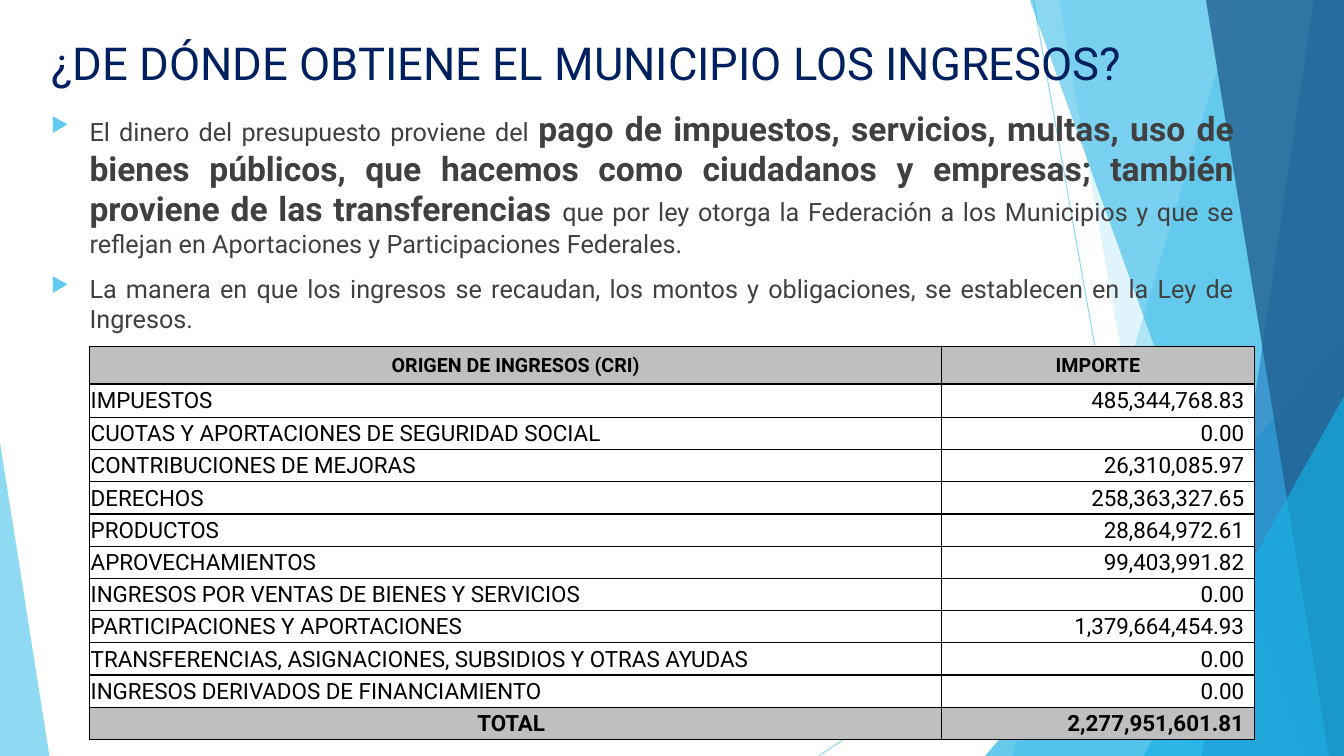
from dataclasses import dataclass

from lxml import etree
from pptx import Presentation
from pptx.dml.color import RGBColor
from pptx.enum.shapes import MSO_CONNECTOR, MSO_SHAPE
from pptx.enum.text import MSO_ANCHOR, PP_ALIGN
from pptx.oxml.ns import qn
from pptx.util import Inches, Pt

STRAIGHT = MSO_CONNECTOR.STRAIGHT
TRIANGLE = MSO_SHAPE.ISOSCELES_TRIANGLE
MIDDLE = MSO_ANCHOR.MIDDLE
LEFT, CENTER, RIGHT, JUSTIFY = PP_ALIGN.LEFT, PP_ALIGN.CENTER, PP_ALIGN.RIGHT, PP_ALIGN.JUSTIFY

SKY = RGBColor(0x5F, 0xCB, 0xEF)
CYAN = RGBColor(0x17, 0xB0, 0xE4)
BLUE = RGBColor(0x2E, 0x83, 0xC3)
DEEP_BLUE = RGBColor(0x22, 0x62, 0x92)
NAVY = RGBColor(0x00, 0x20, 0x60)
DARK_GRAY = RGBColor(0x40, 0x40, 0x40)
GRAY = RGBColor(0xBF, 0xBF, 0xBF)
BLACK = RGBColor(0x00, 0x00, 0x00)
WHITE = RGBColor(0xFF, 0xFF, 0xFF)

FONT = "Roboto"
WIDTH, HEIGHT = 13.33, 7.5
BAND_TOP = -0.01


@dataclass
class Ray:
    start: tuple[float, float]
    end: tuple[float, float]


@dataclass
class Band:
    """A strip from its slanted left edge to the right side of the slide."""
    top_x: float
    bottom_x: float
    color: RGBColor
    opacity: int


@dataclass
class Corner:
    """A triangle standing on the bottom of the slide."""
    left: float
    top: float
    width: float
    apex: float
    color: RGBColor
    opacity: int


@dataclass
class Span:
    text: str
    size: float
    bold: bool = False


DECORATION = [
    Ray((10.25, 0), (11.58, HEIGHT)),
    Ray((WIDTH, 4.03), (8.12, HEIGHT)),
    Band(12.28, 10.04, SKY, 36),
    Band(10.5, 11.83, SKY, 20),
    Corner(9.77, 3.33, 3.56, 1, CYAN, 66),
    Band(10.21, 12.91, CYAN, 50),
    Band(13.03, 11.92, BLUE, 70),
    Band(11.96, 13.18, DEEP_BLUE, 80),
    Corner(11.34, 3.93, 1.99, 1, CYAN, 66),
    Corner(0, 4.39, 0.49, 0, SKY, 70),
]

TITLE = "¿DE DÓNDE OBTIENE EL MUNICIPIO LOS INGRESOS?"
BODY = [
    [
        Span("El dinero del presupuesto proviene del ", 18),
        Span("pago de impuestos, servicios, multas, uso de bienes públicos, que hacemos como "
             "ciudadanos y empresas; también proviene de las transferencias ", 24, True),
        Span("que por ley otorga la Federación a los Municipios y que se reflejan en "
             "Aportaciones y Participaciones Federales.", 18),
    ],
    [Span("La manera en que los ingresos se recaudan, los montos y obligaciones, "
          "se establecen en la Ley de Ingresos.", 18)],
]
INCOME = [
    ("ORIGEN DE INGRESOS (CRI)", "IMPORTE"),
    ("IMPUESTOS", "485,344,768.83"),
    ("CUOTAS Y APORTACIONES DE SEGURIDAD SOCIAL", "0.00"),
    ("CONTRIBUCIONES DE MEJORAS", "26,310,085.97"),
    ("DERECHOS", "258,363,327.65"),
    ("PRODUCTOS", "28,864,972.61"),
    ("APROVECHAMIENTOS", "99,403,991.82"),
    ("INGRESOS POR VENTAS DE BIENES Y SERVICIOS", "0.00"),
    ("PARTICIPACIONES Y APORTACIONES", "1,379,664,454.93"),
    ("TRANSFERENCIAS, ASIGNACIONES, SUBSIDIOS Y OTRAS AYUDAS", "0.00"),
    ("INGRESOS DERIVADOS DE FINANCIAMIENTO", "0.00"),
    ("TOTAL", "2,277,951,601.81"),
]
COLUMN_WIDTHS = [8.45, 3.1]
ROW_HEIGHTS = [0.37, 0.33] + [0.32] * (len(INCOME) - 2)


def set_opacity(shape, percent: int) -> None:
    for color in shape.element.spPr.iter(qn("a:srgbClr")):
        etree.SubElement(color, qn("a:alpha"), val=str(percent * 1000))


def paint(shape, color: RGBColor, opacity: int) -> None:
    shape.shadow.inherit = False
    shape.fill.solid()
    shape.fill.fore_color.rgb = color
    shape.line.fill.background()
    set_opacity(shape, opacity)


def draw_ray(page, ray: Ray) -> None:
    line = page.shapes.add_connector(STRAIGHT, *map(Inches, ray.start + ray.end))
    line.line.color.rgb = SKY
    line.line.width = Pt(0.75)
    etree.SubElement(line.element.spPr, qn("a:effectLst"))
    set_opacity(line, 70)


def draw_band(page, band: Band) -> None:
    corners = [(WIDTH, BAND_TOP), (WIDTH, HEIGHT), (band.bottom_x, HEIGHT)]
    outline = page.shapes.build_freeform(Inches(band.top_x), Inches(BAND_TOP))
    outline.add_line_segments([(Inches(x), Inches(y)) for x, y in corners], close=True)
    paint(outline.convert_to_shape(), band.color, band.opacity)


def draw_corner(page, corner: Corner) -> None:
    box = (corner.left, corner.top, corner.width, HEIGHT - corner.top)
    shape = page.shapes.add_shape(TRIANGLE, *map(Inches, box))
    shape.adjustments[0] = corner.apex
    paint(shape, corner.color, corner.opacity)


def style(run, size: float, color: RGBColor, bold: bool = False) -> None:
    run.font.name = FONT
    run.font.size = Pt(size)
    run.font.bold = bold
    run.font.color.rgb = color


def add_text_frame(page, left: float, top: float, width: float, height: float):
    frame = page.shapes.add_textbox(*map(Inches, (left, top, width, height))).text_frame
    frame.word_wrap = True
    return frame


def add_bullet(para) -> None:
    properties = para._p.get_or_add_pPr()
    properties.set("marL", str(Inches(0.38)))
    properties.set("indent", str(Inches(-0.38)))
    color = etree.SubElement(properties, qn("a:buClr"))
    etree.SubElement(color, qn("a:srgbClr"), val=str(SKY))
    etree.SubElement(properties, qn("a:buSzPct"), val="80000")
    etree.SubElement(properties, qn("a:buChar"), char="▶")


def draw_body(page) -> None:
    frame = add_text_frame(page, 0.41, 1.02, 11.93, 4.24)
    for index, spans in enumerate(BODY):
        para = frame.add_paragraph() if index else frame.paragraphs[0]
        para.alignment = JUSTIFY
        para.space_before = Pt(10)
        add_bullet(para)
        for span in spans:
            run = para.add_run()
            run.text = span.text
            style(run, span.size, DARK_GRAY, span.bold)


def add_borders(cell) -> None:
    properties = cell._tc.get_or_add_tcPr()
    for side in ("lnL", "lnR", "lnT", "lnB"):
        line = etree.SubElement(properties, qn(f"a:{side}"), w=str(Pt(1)))
        fill = etree.SubElement(line, qn("a:solidFill"))
        etree.SubElement(fill, qn("a:srgbClr"), val=str(BLACK))


def draw_income_table(page) -> None:
    box = (0.89, 3.44, sum(COLUMN_WIDTHS), sum(ROW_HEIGHTS))
    table = page.shapes.add_table(len(INCOME), 2, *map(Inches, box)).table
    for column, width in zip(table.columns, COLUMN_WIDTHS):
        column.width = Inches(width)
    last = len(INCOME) - 1
    for row, texts in enumerate(INCOME):
        table.rows[row].height = Inches(ROW_HEIGHTS[row])
        strong = row in (0, last)
        alignments = {0: (CENTER, CENTER), last: (CENTER, RIGHT)}.get(row, (LEFT, RIGHT))
        for column, (text, alignment) in enumerate(zip(texts, alignments)):
            cell = table.cell(row, column)
            add_borders(cell)
            cell.fill.solid()
            cell.fill.fore_color.rgb = GRAY if strong else WHITE
            cell.vertical_anchor = MIDDLE
            cell.margin_left = cell.margin_top = Inches(0.01)
            cell.margin_right = Inches(0.1 if alignment == RIGHT or row == last else 0.01)
            cell.margin_bottom = 0
            para = cell.text_frame.paragraphs[0]
            para.text = text
            para.alignment = alignment
            style(para.runs[0], 14 if row == 0 else 16, BLACK, strong)


def main() -> None:
    deck = Presentation()
    deck.slide_width, deck.slide_height = Inches(WIDTH), Inches(HEIGHT)
    page = deck.slides.add_slide(deck.slide_layouts[6])
    painters = {Ray: draw_ray, Band: draw_band, Corner: draw_corner}
    for item in DECORATION:
        painters[type(item)](page, item)
    title = add_text_frame(page, 0.41, 0.3, 11.49, 1.44)
    title.text = TITLE
    style(title.paragraphs[0].runs[0], 32.4, NAVY)
    draw_body(page)
    draw_income_table(page)
    deck.save("out.pptx")


if __name__ == "__main__":
    main()
